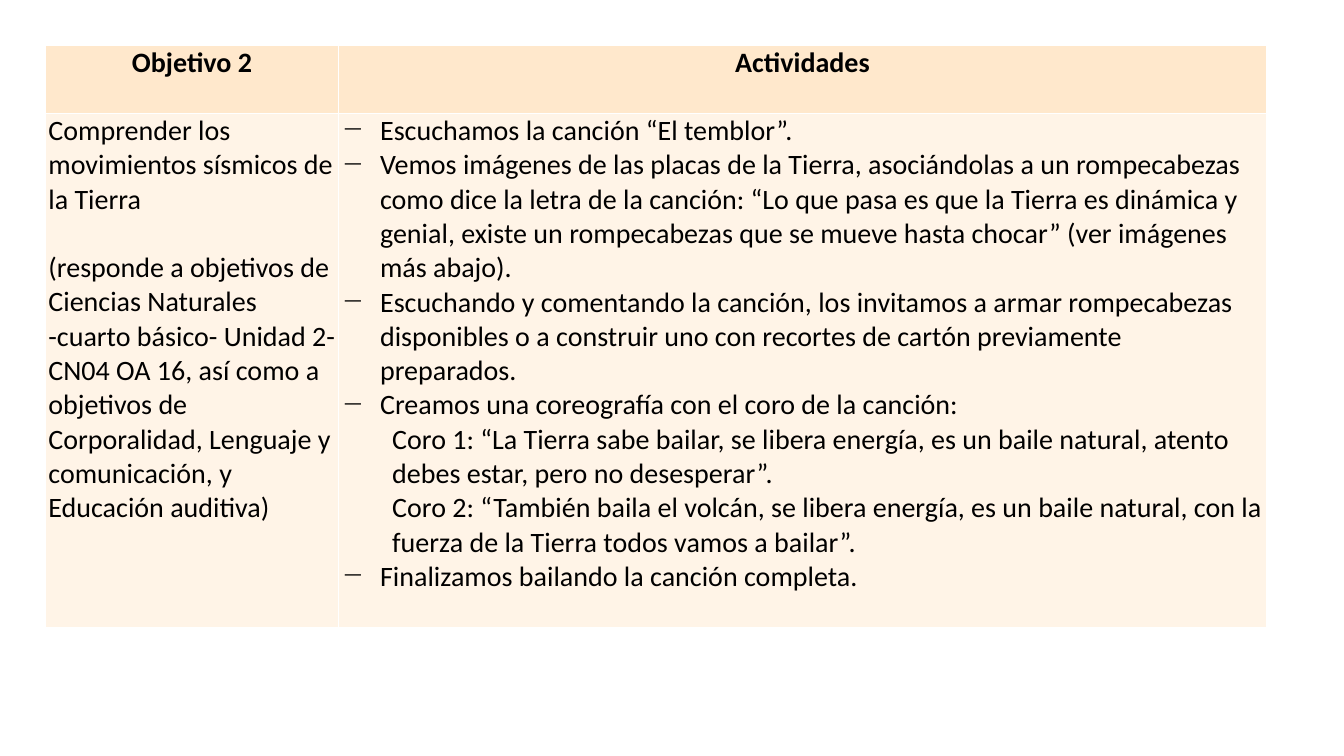
from lxml import etree
from pptx import Presentation
from pptx.dml.color import RGBColor
from pptx.enum import text
from pptx.oxml import ns
from pptx.util import Inches, Pt

COLORS = {"header": "FFE8CC", "body": "FFF4E7", "text": "000000", "border": "FFFFFF"}
FONT = {"name": "Calibri", "size": Pt(20)}
MARGINS = {"margin_left": Inches(0.03), "margin_right": Inches(0.03),
           "margin_top": 0, "margin_bottom": 0}
COLUMNS = [2.91, 9.2]
ROWS = [0.68, 5.1]
LINE = Pt(24.4)

HEADERS = ["Objetivo 2", "Actividades"]
OBJECTIVE = [
    "Comprender los movimientos sísmicos de la Tierra",
    "(responde a objetivos de Ciencias Naturales -cuarto básico- Unidad 2- CN04 OA 16, "
    "así como a objetivos de Corporalidad, Lenguaje y comunicación, y Educación auditiva)",
]
# Each activity is a dash item or a chorus set in under the item above it
ACTIVITIES = [
    ("dash", "Escuchamos la canción “El temblor”."),
    ("dash", "Vemos imágenes de las placas de la Tierra, asociándolas a un rompecabezas "
             "como dice la letra de la canción: “Lo que pasa es que la Tierra es dinámica y "
             "genial, existe un rompecabezas que se mueve hasta chocar” (ver imágenes más abajo)."),
    ("dash", "Escuchando y comentando la canción, los invitamos a armar rompecabezas "
             "disponibles o a construir uno con recortes de cartón previamente preparados."),
    ("dash", "Creamos una coreografía con el coro de la canción:"),
    ("chorus", "Coro 1: “La Tierra sabe bailar, se libera energía, es un baile natural, "
               "atento debes estar, pero no desesperar”."),
    ("chorus", "Coro 2: “También baila el volcán, se libera energía, es un baile natural, "
               "con la fuerza de la Tierra todos vamos a bailar”."),
    ("dash", "Finalizamos bailando la canción completa."),
]


def set_attributes(target, values):
    for name, value in values.items():
        setattr(target, name, value)


def set_indent(p, left, first, bullet=None):
    pPr = p._p.get_or_add_pPr()
    pPr.set("marL", str(Inches(left)))
    pPr.set("indent", str(Inches(first)))
    if bullet:
        etree.SubElement(pPr, ns.qn("a:buChar"), char=bullet)


def add_text(tf, content, bold=False):
    p = tf.paragraphs[0]
    if p.runs:
        p = tf.add_paragraph()
    r = p.add_run()
    r.text = content
    set_attributes(r.font, {**FONT, "bold": bold})
    r.font.color.rgb = RGBColor.from_string(COLORS["text"])
    return p


def format_cell(cell, fill):
    set_attributes(cell, MARGINS)
    tcPr = cell._tc.get_or_add_tcPr()
    for side in ("lnL", "lnR", "lnT", "lnB"):
        ln = etree.SubElement(tcPr, ns.qn(f"a:{side}"), w=str(Pt(1)))
        solid = etree.SubElement(ln, ns.qn("a:solidFill"))
        etree.SubElement(solid, ns.qn("a:srgbClr"), val=COLORS["border"])
    cell.fill.solid()
    cell.fill.fore_color.rgb = RGBColor.from_string(COLORS[fill])


def add_plan_table(s):
    frame = s.shapes.add_table(len(ROWS), len(COLUMNS), Inches(0.45), Inches(0.45),
                               Inches(sum(COLUMNS)), Inches(sum(ROWS)))
    table = frame.table
    table.horz_banding = False
    for column, width in zip(table.columns, COLUMNS):
        column.width = Inches(width)
    for row, height, fill in zip(table.rows, ROWS, ("header", "body")):
        row.height = Inches(height)
        for cell in row.cells:
            format_cell(cell, fill)
    return table


def main():
    prs = Presentation()
    prs.slide_width, prs.slide_height = Inches(13.33), Inches(7.5)
    s = prs.slides.add_slide(prs.slide_layouts[6])
    table = add_plan_table(s)

    # Header row
    for column, header in enumerate(HEADERS):
        p = add_text(table.cell(0, column).text_frame, header, bold=True)
        p.alignment = text.PP_ALIGN.CENTER

    # Objective, its second paragraph one line further down
    for i, content in enumerate(OBJECTIVE):
        p = add_text(table.cell(1, 0).text_frame, content)
        p.space_before = i * LINE

    # Activities
    for kind, content in ACTIVITIES:
        p = add_text(table.cell(1, 1).text_frame, content)
        if kind == "dash":
            set_indent(p, 0.38, -0.38, "−")
        else:
            set_indent(p, 0.5, 0)

    prs.save("out.pptx")


if __name__ == "__main__":
    main()
